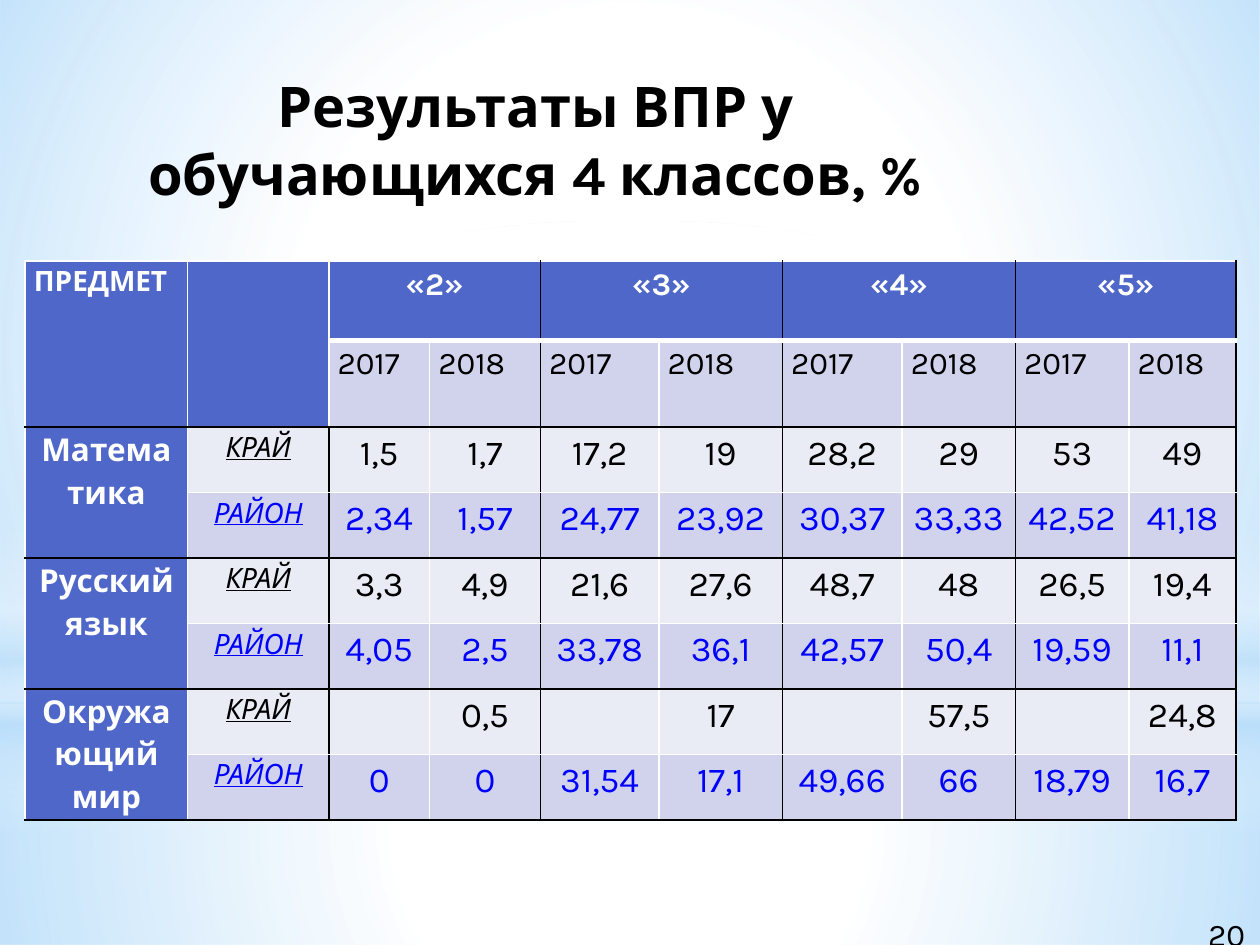
from typing import NamedTuple

from lxml.etree import SubElement
from pptx import Presentation
from pptx.dml.color import RGBColor
from pptx.enum.shapes import MSO_SHAPE
from pptx.enum.text import MSO_ANCHOR, MSO_AUTO_SIZE, PP_ALIGN
from pptx.oxml import parse_xml
from pptx.oxml.ns import nsdecls, qn
from pptx.util import Inches, Pt

FONT = "Karla"
BLACK, WHITE, BLUE = "000000", "FFFFFF", "0000FF"
SKY, HEADER, DARK_BAND, LIGHT_BAND = "B4DCFA", "4E67C8", "D0D3EB", "E9EBF5"


class Stop(NamedTuple):
    position: int
    color: str
    opacity: int


class Glow(NamedTuple):
    kind: MSO_SHAPE
    top: float
    height: float
    stops: list[Stop]
    radial: bool = True


class Subject(NamedTuple):
    name: str
    region: list[str]
    district: list[str]


class TextStyle(NamedTuple):
    size: int
    color: str = BLACK
    bold: bool = False
    label: bool = False  # italic and underlined
    align: PP_ALIGN = PP_ALIGN.CENTER


GLOWS = [
    Glow(MSO_SHAPE.RECTANGLE, 5.58, 1.92,
         [Stop(0, WHITE, 91), Stop(37, WHITE, 76), Stop(100, SKY, 79)]),
    Glow(MSO_SHAPE.RECTANGLE, 0, 5.58,
         [Stop(0, WHITE, 89), Stop(48, WHITE, 62), Stop(100, SKY, 79)]),
    Glow(MSO_SHAPE.RECTANGLE, 4.12, 2.5,
         [Stop(0, WHITE, 0), Stop(29, WHITE, 30), Stop(45, SKY, 40),
          Stop(55, WHITE, 26), Stop(65, SKY, 60), Stop(100, WHITE, 0)], radial=False),
    Glow(MSO_SHAPE.OVAL, 1.75, 5.58, [Stop(0, WHITE, 100), Stop(56, WHITE, 0)]),
]
GRADES = ["«2»", "«3»", "«4»", "«5»"]
YEARS = ["2017", "2018"]
SUBJECTS = [
    Subject("Математика",
            ["1,5", "1,7", "17,2", "19", "28,2", "29", "53", "49"],
            ["2,34", "1,57", "24,77", "23,92", "30,37", "33,33", "42,52", "41,18"]),
    Subject("Русский язык",
            ["3,3", "4,9", "21,6", "27,6", "48,7", "48", "26,5", "19,4"],
            ["4,05", "2,5", "33,78", "36,1", "42,57", "50,4", "19,59", "11,1"]),
    Subject("Окружающий мир",
            ["", "0,5", "", "17", "", "57,5", "", "24,8"],
            ["0", "0", "31,54", "17,1", "49,66", "66", "18,79", "16,7"]),
]
COLUMN_WIDTHS = [1.29, 1.12, 0.8, 0.88, 0.94, 0.98, 0.95, 0.9, 0.9, 0.85]
ROW_HEIGHTS = [0.63, 0.69] + [0.52] * 6


def rgb(color: str) -> RGBColor:
    return RGBColor.from_string(color)


def add_run(paragraph, text: str, style: TextStyle) -> None:
    paragraph.alignment = style.align
    run = paragraph.add_run()
    run.text = text
    font = run.font
    font.name, font.size, font.bold = FONT, Pt(style.size), style.bold
    font.italic = font.underline = style.label
    font.color.rgb = rgb(style.color)


def add_glow(slide, glow: Glow) -> None:
    shape = slide.shapes.add_shape(
        glow.kind, 0, Inches(glow.top), Inches(10), Inches(glow.height))
    shape.shadow.inherit = False
    shape.line.fill.background()
    stops = "".join(
        f'<a:gs pos="{stop.position * 1000}"><a:srgbClr val="{stop.color}">'
        f'<a:alpha val="{stop.opacity * 1000}"/></a:srgbClr></a:gs>'
        for stop in glow.stops)
    if glow.radial:
        direction = ('<a:path path="circle"><a:fillToRect l="50000" t="50000" '
                     'r="50000" b="50000"/></a:path>')
    else:
        direction = '<a:lin ang="5400000" scaled="0"/>'
    gradient = parse_xml(f'<a:gradFill {nsdecls("a")} rotWithShape="1">'
                         f'<a:gsLst>{stops}</a:gsLst>{direction}</a:gradFill>')
    shape._element.spPr.find(qn("a:prstGeom")).addnext(gradient)


def cell_borders(row: int, column: int) -> dict[str, tuple[str, int]]:
    """Black lines part the grades and subjects, white lines the rest."""
    in_grades, in_body = column >= 2, row >= 2
    left = in_grades and column % 2 == 0 and (column > 2 or in_body)
    right = (column % 2 == 1 and (in_grades or in_body)) or (row == 0 and in_grades)
    top = in_body and row % 2 == 0
    bottom = row % 2 == 1 or column == 0 or (row == 0 and not in_grades)
    black = {"lnL": left, "lnR": right, "lnT": top, "lnB": bottom}
    borders = {tag: (BLACK if dark else WHITE, 1) for tag, dark in black.items()}
    if in_grades and not in_body:
        thick_side = "lnB" if row == 0 else "lnT"
        borders[thick_side] = (WHITE, 3)
    return borders


def format_cell(cell, row: int, column: int) -> None:
    cell.margin_left = cell.margin_right = Inches(0.07)
    cell.margin_top = cell.margin_bottom = 0
    properties = cell._tc.get_or_add_tcPr()
    for tag, (color, width) in cell_borders(row, column).items():
        line = SubElement(properties, qn(f"a:{tag}"), w=str(Pt(width)))
        fill = SubElement(line, qn("a:solidFill"))
        SubElement(fill, qn("a:srgbClr"), val=color)
    if column == 0 or row == 0 or (column == 1 and row == 1):
        color = HEADER
    else:
        color = DARK_BAND if row % 2 else LIGHT_BAND
    cell.fill.solid()
    cell.fill.fore_color.rgb = rgb(color)


def write_cell(cell, text: str, style: TextStyle) -> None:
    paragraph = cell.text_frame.paragraphs[0]
    paragraph.line_spacing = 1.15
    paragraph.space_after = Pt(10)
    if text:
        add_run(paragraph, text, style)


def add_results_table(slide) -> None:
    table = slide.shapes.add_table(
        len(ROW_HEIGHTS), len(COLUMN_WIDTHS), Inches(0.2), Inches(2.07),
        Inches(sum(COLUMN_WIDTHS)), Inches(sum(ROW_HEIGHTS))).table
    for column, width in zip(table.columns, COLUMN_WIDTHS):
        column.width = Inches(width)
    for row, height in zip(table.rows, ROW_HEIGHTS):
        row.height = Inches(height)
    for row in range(len(ROW_HEIGHTS)):
        for column in range(len(COLUMN_WIDTHS)):
            format_cell(table.cell(row, column), row, column)

    # Header rows
    heading = TextStyle(18, WHITE, bold=True)
    write_cell(table.cell(0, 0), "ПРЕДМЕТ",
               TextStyle(16, WHITE, bold=True, align=PP_ALIGN.LEFT))
    for column in (0, 1):
        table.cell(0, column).merge(table.cell(1, column))
    for index, grade in enumerate(GRADES):
        first = 2 + 2 * index
        table.cell(0, first).merge(table.cell(0, first + 1))
        write_cell(table.cell(0, first), grade, heading)
        for offset, year in enumerate(YEARS):
            write_cell(table.cell(1, first + offset), year,
                       TextStyle(18, align=PP_ALIGN.LEFT))

    # Two rows for each subject
    for index, subject in enumerate(SUBJECTS):
        first = 2 + 2 * index
        table.cell(first, 0).merge(table.cell(first + 1, 0))
        write_cell(table.cell(first, 0), subject.name, heading)
        lines = [("КРАЙ", subject.region, BLACK), ("РАЙОН", subject.district, BLUE)]
        for row, (label, values, color) in enumerate(lines, first):
            write_cell(table.cell(row, 1), label, TextStyle(16, color, label=True))
            for column, value in enumerate(values, 2):
                write_cell(table.cell(row, column), value, TextStyle(20, color))


def add_title(slide, text: str) -> None:
    title = slide.shapes.title
    title.left, title.top = Inches(0.59), Inches(0.52)
    title.width, title.height = Inches(7.32), Inches(1.18)
    frame = title.text_frame
    frame.word_wrap, frame.auto_size = True, MSO_AUTO_SIZE.NONE
    frame.vertical_anchor = MSO_ANCHOR.TOP
    add_run(frame.paragraphs[0], text, TextStyle(32, bold=True))
    slide.shapes._spTree.append(title._element)  # bring to front


def add_page_number(slide, number: str) -> None:
    box = slide.shapes.add_textbox(Inches(9.49), Inches(7.21), Inches(0.51), Inches(0.4))
    box.text_frame.word_wrap = True
    add_run(box.text_frame.paragraphs[0], number, TextStyle(18, align=PP_ALIGN.LEFT))


def main() -> None:
    presentation = Presentation()
    presentation.slide_width, presentation.slide_height = Inches(10), Inches(7.5)
    slide = presentation.slides.add_slide(presentation.slide_layouts[5])
    for glow in GLOWS:
        add_glow(slide, glow)
    add_results_table(slide)
    add_title(slide, "Результаты ВПР у обучающихся 4 классов, %")
    add_page_number(slide, "20")
    presentation.save("out.pptx")


if __name__ == "__main__":
    main()
